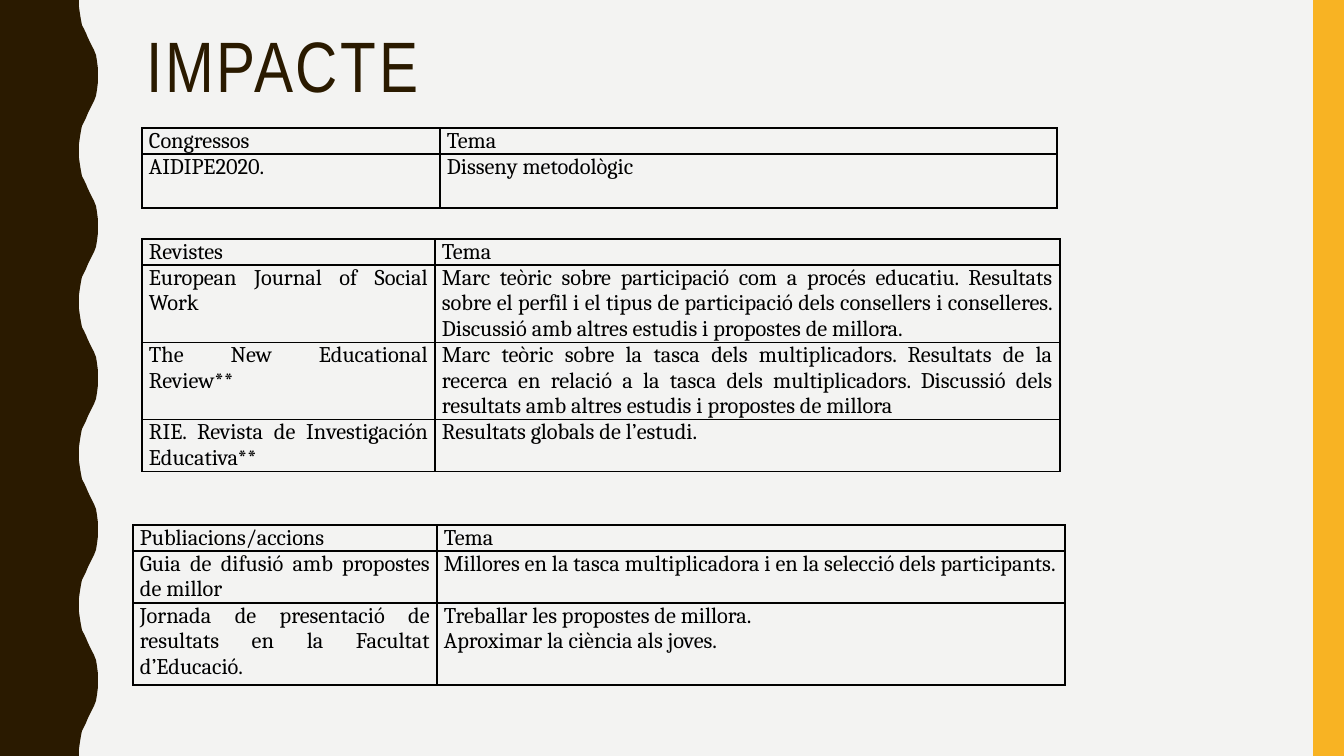
from pptx import Presentation
from pptx.dml.color import RGBColor
from pptx.enum.shapes import MSO_SHAPE
from pptx.enum.text import MSO_ANCHOR, PP_ALIGN
from pptx.oxml import parse_xml
from pptx.oxml.ns import nsdecls
from pptx.util import Emu, Pt

WIDTH, HEIGHT = 1344, 756
EMU_PER_PX = 914400 / 100.8
COLORS = {"paper": "F3F3F2", "brown": "2A1A00", "amber": "F8B323", "ink": "000000"}

# Half of one wave, from trough to crest; the other half is its mirror.
HALF_WAVE = [(79, 0), (79, 7), (80, 14), (81, 20), (82, 25), (84, 29), (86, 33),
             (88, 38), (90, 42), (92, 46), (94, 50), (96, 55), (97, 61), (98, 69)]
WAVES = 5

CONGRESSES = [
    ("Congressos", "Tema"),
    ("AIDIPE2020.", "Disseny metodològic"),
]
JOURNALS = [
    ("Revistes", "Tema"),
    ("European Journal of Social Work",
     "Marc teòric sobre participació com a procés educatiu. Resultats sobre el perfil i "
     "el tipus de participació dels consellers i conselleres. Discussió amb altres "
     "estudis i propostes de millora."),
    ("The New Educational Review**",
     "Marc teòric sobre la tasca dels multiplicadors. Resultats de la recerca en relació "
     "a la tasca dels multiplicadors. Discussió dels resultats amb altres estudis i "
     "propostes de millora"),
    ("RIE. Revista de Investigación Educativa**", "Resultats globals de l’estudi."),
]
ACTIONS = [
    ("Publiacions/accions", "Tema"),
    ("Guia de difusió amb propostes de millor",
     "Millores en la tasca multiplicadora i en la selecció dels participants."),
    ("Jornada de presentació de resultats en la Facultat d’Educació.",
     "Treballar les propostes de millora.\nAproximar la ciència als joves."),
]


def px(length):
    return Emu(round(length * EMU_PER_PX))


def color(name):
    return RGBColor.from_string(COLORS[name])


def write(frame, text, *, font, size, ink, align=PP_ALIGN.LEFT, line_spacing=None,
          tracking=None):
    """Fill a text frame, one paragraph for each line; tracking is in points."""
    for index, line in enumerate(text.split("\n")):
        para = frame.paragraphs[0] if index == 0 else frame.add_paragraph()
        para.alignment = align
        para.line_spacing = line_spacing
        span = para.add_run()
        span.text = line
        span.font.name = font
        span.font.size = Pt(size)
        span.font.color.rgb = color(ink)
        if tracking:
            span.font._element.set("spc", str(tracking * 100))


class SlideBuilder:
    title_font = "Arial Narrow"
    body_font = "Cambria"

    def __init__(self, deck):
        self.page = deck.slides.add_slide(deck.slide_layouts[5])
        fill = self.page.background.fill
        fill.solid()
        fill.fore_color.rgb = color("paper")

    def paint(self, shape, name):
        shape.shadow.inherit = False
        shape.fill.solid()
        shape.fill.fore_color.rgb = color(name)
        shape.line.fill.background()

    def wavy_band(self):
        period = HEIGHT / WAVES
        crest = [(98, period / 2)]
        mirrored = [(x, period - y) for x, y in reversed(HALF_WAVE[1:])]
        wave = HALF_WAVE + crest + mirrored
        edge = [(x, y + period * turn) for turn in range(WAVES) for x, y in wave]
        outline = self.page.shapes.build_freeform(0, 0, scale=EMU_PER_PX)
        outline.add_line_segments(edge + [(HALF_WAVE[0][0], HEIGHT), (0, HEIGHT)])
        self.paint(outline.convert_to_shape(), "brown")

    def bar(self, left, top, width, height):
        box = self.page.shapes.add_shape(
            MSO_SHAPE.RECTANGLE, px(left), px(top), px(width), px(height))
        self.paint(box, "amber")

    def title(self, text, left, top, width, height):
        box = self.page.shapes.title
        box.left, box.top, box.width, box.height = map(px, (left, top, width, height))
        frame = box.text_frame
        frame.word_wrap = True
        frame.vertical_anchor = MSO_ANCHOR.TOP
        write(frame, text, font=self.title_font, size=51, ink="brown",
              line_spacing=0.9, tracking=2)

    def border(self, cell):
        properties = cell._tc.get_or_add_tcPr()
        for side in ("lnL", "lnR", "lnT", "lnB"):
            properties.append(parse_xml(
                f'<a:{side} {nsdecls("a")} w="{Pt(1)}"><a:solidFill>'
                f'<a:srgbClr val="{COLORS["ink"]}"/></a:solidFill></a:{side}>'))

    def table(self, rows, left, top, column_widths, row_heights):
        table = self.page.shapes.add_table(
            len(rows), len(column_widths), px(left), px(top),
            px(sum(column_widths)), px(sum(row_heights))).table
        table.first_row = table.horz_banding = False
        for column, width in zip(table.columns, column_widths):
            column.width = px(width)
        for row, height, texts in zip(table.rows, row_heights, rows):
            row.height = px(height)
            for cell, text in zip(row.cells, texts):
                cell.margin_left = cell.margin_right = px(7)
                cell.margin_top = cell.margin_bottom = 0
                self.border(cell)
                cell.fill.background()
                write(cell.text_frame, text, font=self.body_font, size=16, ink="ink",
                      align=PP_ALIGN.JUSTIFY)


def main():
    deck = Presentation()
    deck.slide_width, deck.slide_height = px(WIDTH), px(HEIGHT)
    slide = SlideBuilder(deck)
    slide.wavy_band()
    slide.bar(1313, 0, 31, HEIGHT)
    slide.title("IMPACTE", 136, 26, 1122, 164)
    slide.table(CONGRESSES, 142, 128, (298, 617), (26, 54))
    slide.table(JOURNALS, 142, 239, (293, 625), (26, 77, 77, 52))
    slide.table(ACTIONS, 133, 525, (304, 628), (26, 52, 82))
    deck.save("out.pptx")


if __name__ == "__main__":
    main()
